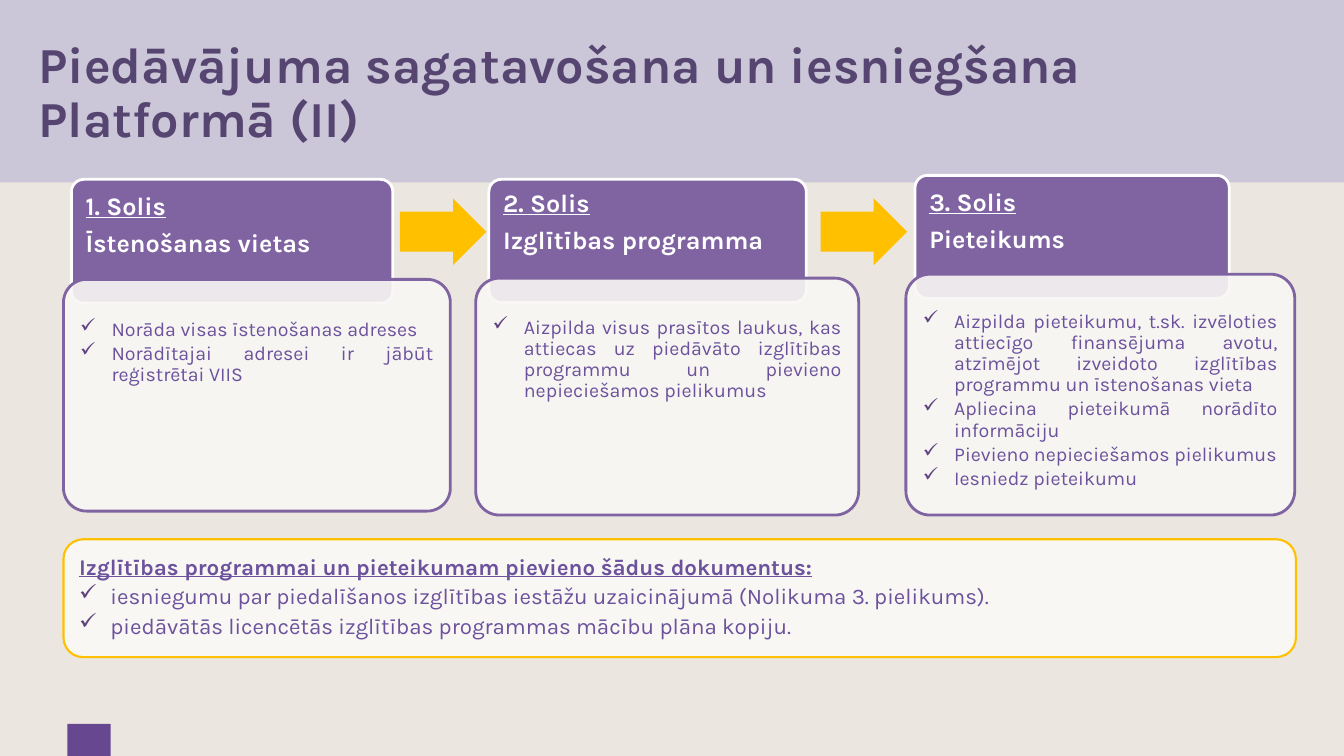
from dataclasses import dataclass

from lxml import etree
from pptx import Presentation
from pptx.dml.color import RGBColor
from pptx.enum.shapes import MSO_SHAPE
from pptx.enum.text import MSO_ANCHOR, PP_ALIGN
from pptx.oxml.ns import qn
from pptx.util import Cm, Pt

RECTANGLE = MSO_SHAPE.RECTANGLE
ROUNDED = MSO_SHAPE.ROUNDED_RECTANGLE
ARROW = MSO_SHAPE.RIGHT_ARROW
TOP, MIDDLE = MSO_ANCHOR.TOP, MSO_ANCHOR.MIDDLE
LEFT, JUSTIFY = PP_ALIGN.LEFT, PP_ALIGN.JUSTIFY

FONT = "Karla"
COLORS = {
    "background": "EBE7E0",
    "band": "CBC7D8",
    "corner": "664790",
    "title": "554570",
    "header": "8064A2",
    "white": "FFFFFF",
    "card": "F8F7F4",
    "body": "6C519C",
    "bullet": "5F417F",
    "accent": "FFC000",
}


@dataclass
class Area:
    left: float
    top: float
    width: float
    height: float

    def lengths(self):
        return Cm(self.left), Cm(self.top), Cm(self.width), Cm(self.height)


@dataclass
class Style:
    size: float
    color: str
    line_spacing: float
    space_after: float = 0
    align: PP_ALIGN = LEFT


@dataclass
class Line:
    text: str
    bold: bool = False
    underline: bool = False
    bullet: bool = False


@dataclass
class Step:
    number: int
    name: str
    header: Area
    label_top: float
    card: Area
    text_inset: float
    tasks: list[str]


TITLE = Style(36, "title", 0.9)
HEADER = Style(18, "white", 0.9, 6.8)
TASK = Style(14, "body", 0.9, 2, JUSTIFY)
NOTE = Style(16, "body", 1.1, 0, JUSTIFY)

STEPS = [
    Step(1, "Īstenošanas vietas", Area(1.8, 4.52, 8.1, 3.12), 4.52,
         Area(1.6, 7.04, 9.75, 5.84), 0.84,
         ["Norāda visas īstenošanas adreses",
          "Norādītajai adresei ir jābūt reģistrētai VIIS"]),
    Step(2, "Izglītības programma", Area(12.32, 4.52, 8, 3.1), 4.45,
         Area(11.99, 7.01, 9.65, 5.97), 0.81,
         ["Aizpilda visus prasītos laukus, kas attiecas uz piedāvāto izglītības "
          "programmu un pievieno nepieciešamos pielikumus"]),
    Step(3, "Pieteikums", Area(23.06, 4.42, 7.92, 3.1), 4.42,
         Area(22.83, 6.91, 9.8, 6.07), 0.76,
         ["Aizpilda pieteikumu, t.sk. izvēloties attiecīgo finansējuma avotu, "
          "atzīmējot izveidoto izglītības programmu un īstenošanas vieta",
          "Apliecina pieteikumā norādīto informāciju",
          "Pievieno nepieciešamos pielikumus",
          "Iesniedz pieteikumu"]),
]
ARROW_LEFTS = [10.08, 20.68]
NOTE_LINES = [
    Line("Izglītības programmai un pieteikumam pievieno šādus dokumentus:", True, True),
    Line("iesniegumu par piedalīšanos izglītības iestāžu uzaicinājumā "
         "(Nolikuma 3. pielikums).", bullet=True),
    Line("piedāvātās licencētās izglītības programmas mācību plāna kopiju.", bullet=True),
]


def rgb(name: str) -> RGBColor:
    return RGBColor.from_string(COLORS[name])


def add_bullet(para) -> None:
    properties = para._p.get_or_add_pPr()
    properties.set("marL", str(Cm(0.79)))
    properties.set("indent", str(-Cm(0.79)))
    color = etree.SubElement(properties, qn("a:buClr"))
    etree.SubElement(color, qn("a:srgbClr"), val=COLORS["bullet"])
    etree.SubElement(properties, qn("a:buChar"), char="✓")


def write(shape, lines: list[Line], style: Style, insets: tuple, anchor=TOP) -> None:
    frame = shape.text_frame
    frame.word_wrap = True
    frame.vertical_anchor = anchor
    (frame.margin_left, frame.margin_top,
     frame.margin_right, frame.margin_bottom) = [Cm(inset) for inset in insets]
    frame.text = "\n".join(line.text for line in lines)
    for para, line in zip(frame.paragraphs, lines):
        if line.bullet:
            add_bullet(para)
        para.alignment = style.align
        para.line_spacing = style.line_spacing
        para.space_after = Pt(style.space_after)
        for span in para.runs:
            span.font.name = FONT
            span.font.size = Pt(style.size)
            span.font.bold = line.bold
            span.font.underline = line.underline
            span.font.color.rgb = rgb(style.color)


def add_box(page, kind, area: Area, fill: str, line: str | None = None,
            line_width: float = 2, adjustments: tuple = ()):
    box = page.shapes.add_shape(kind, *area.lengths())
    box.shadow.inherit = False
    box.fill.solid()
    box.fill.fore_color.rgb = rgb(fill)
    if line:
        box.line.color.rgb = rgb(line)
        box.line.width = Pt(line_width)
    else:
        box.line.fill.background()
    for index, value in enumerate(adjustments):
        box.adjustments[index] = value
    return box


def add_label(page, area: Area, lines: list[Line], style: Style, insets: tuple,
              anchor=TOP) -> None:
    write(page.shapes.add_textbox(*area.lengths()), lines, style, insets, anchor)


def add_step(page, step: Step) -> None:
    header = step.header
    add_box(page, ROUNDED, header, "header", "white", adjustments=(0.1,))
    add_label(page, Area(header.left, step.label_top, header.width, 2.07),
              [Line(f"{step.number}. Solis", True, True), Line(step.name, True)],
              HEADER, (0.36, 0.36, 0.36, 0.18))
    card = add_box(page, ROUNDED, step.card, "card", "header", adjustments=(0.1,))
    color = card.fill._xPr.find(qn("a:solidFill"))[0]
    etree.SubElement(color, qn("a:alpha"), val="90000")
    write(card, [Line(task, bullet=True) for task in step.tasks], TASK,
          (0.25, step.text_inset, 0.25, 0.25))


def main() -> None:
    deck = Presentation()
    deck.slide_width, deck.slide_height = Cm(33.87), Cm(19.05)
    page = deck.slides.add_slide(deck.slide_layouts[6])
    page.background.fill.solid()
    page.background.fill.fore_color.rgb = rgb("background")

    add_box(page, RECTANGLE, Area(0, 0, 33.87, 4.6), "band")
    add_box(page, RECTANGLE, Area(1.7, 18.24, 1.09, 0.81), "corner")
    add_label(page, Area(0.97, 0.79, 27.61, 3.18),
              [Line("Piedāvājuma sagatavošana un iesniegšana Platformā (II)", True)],
              TITLE, (0, 0.13, 0.25, 0.13), MIDDLE)
    for step in STEPS:
        add_step(page, step)
    for left in ARROW_LEFTS:
        add_box(page, ARROW, Area(left, 5, 2.18, 1.68), "accent", adjustments=(0.6, 0.5))
    note = add_box(page, ROUNDED, Area(1.6, 13.59, 31.06, 2.97), "card", "accent", 1.5)
    write(note, NOTE_LINES, NOTE, (0.25, 0.13, 0.25, 0.13))

    deck.save("out.pptx")


if __name__ == "__main__":
    main()
